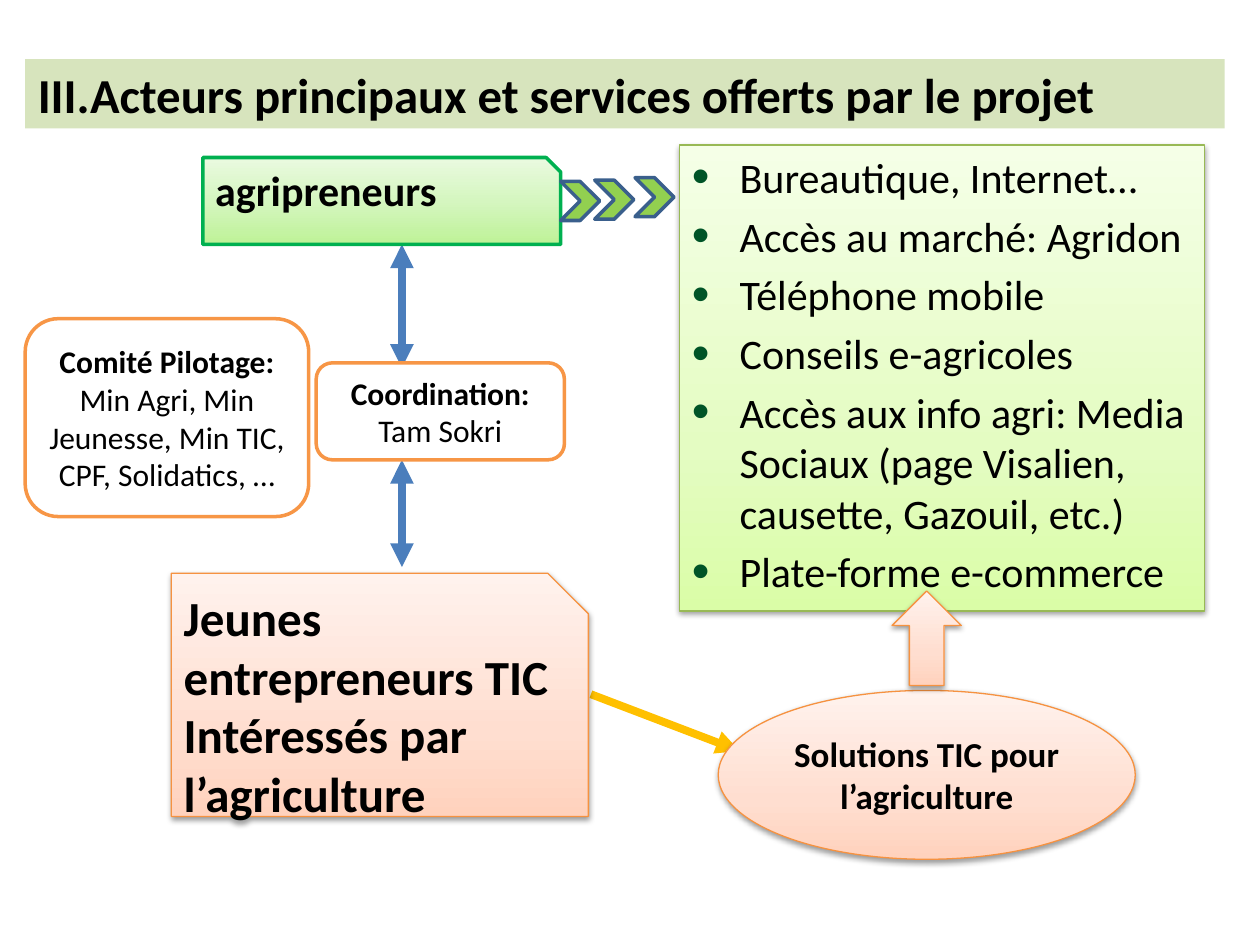
import pptx
import pptx.util
from lxml import etree
from pptx.dml.color import RGBColor
from pptx.enum.shapes import MSO_CONNECTOR, MSO_SHAPE
from pptx.enum.text import MSO_ANCHOR, MSO_AUTO_SIZE, PP_ALIGN
from pptx.oxml import parse_xml
from pptx.oxml.ns import nsdecls, qn

FONT = "Calibri"
BLACK = RGBColor(0x00, 0x00, 0x00)
WHITE = RGBColor(0xFF, 0xFF, 0xFF)
TITLE_GREEN = RGBColor(0xD7, 0xE4, 0xBD)
LIST_BORDER = RGBColor(0x98, 0xB9, 0x55)
BULLET_GREEN = RGBColor(0x00, 0x54, 0x27)
GREEN = RGBColor(0x00, 0xB0, 0x50)
CHEVRON_GREEN = RGBColor(0x92, 0xD0, 0x50)
CHEVRON_BORDER = RGBColor(0x3A, 0x5F, 0x8C)
ORANGE = RGBColor(0xF7, 0x96, 0x46)
PEACH_BORDER = RGBColor(0xF6, 0x92, 0x40)
BLUE = RGBColor(0x4B, 0x7E, 0xBC)
YELLOW = RGBColor(0xFF, 0xC0, 0x00)

# Gradients run from bottom to top: (percent, colour)
LIST_GRADIENT = [(0, RGBColor(0xDA, 0xFD, 0xA7)), (35, RGBColor(0xE4, 0xFC, 0xC2)),
                 (100, RGBColor(0xF5, 0xFF, 0xE7))]
GREEN_GRADIENT = [(0, RGBColor(0xBE, 0xF2, 0x97)), (50, RGBColor(0xD5, 0xF6, 0xC0)),
                  (100, RGBColor(0xEA, 0xFA, 0xE0))]
PEACH_GRADIENT = [(0, RGBColor(0xFF, 0xD2, 0xBD)), (35, RGBColor(0xFF, 0xDE, 0xD0)),
                  (100, RGBColor(0xFF, 0xF2, 0xED))]

# Content; places are (left, top, width, height) on a grid of 100 columns by 75 rows
COLUMNS, ROWS = 100, 75
TITLE = "III.Acteurs principaux et services offerts par le projet"
TITLE_PLACE = (2, 4.7, 95.2, 5.5)
SERVICES = [
    "Bureautique, Internet…",
    "Accès au marché: Agridon",
    "Téléphone mobile",
    "Conseils e-agricoles",
    "Accès aux info agri: Media Sociaux (page Visalien, causette, Gazouil, etc.)",
    "Plate-forme e-commerce",
]
SERVICES_PLACE = (53.9, 11.5, 41.7, 37)

# Styles: fill, border, border width, shadow
GREEN_STYLE = (GREEN_GRADIENT, GREEN, 2, False)
PEACH_STYLE = (PEACH_GRADIENT, PEACH_BORDER, 0.75, True)
CHEVRON_STYLE = (CHEVRON_GREEN, CHEVRON_BORDER, 2, False)
OUTLINE_STYLE = (WHITE, ORANGE, 2, False)

# Actors: shape, place, style, paragraphs of (text, bold) runs, size, alignment
ACTORS = [
    (MSO_SHAPE.SNIP_1_RECTANGLE, (16.1, 12.5, 28.4, 6.9), GREEN_STYLE,
     [[("agripreneurs", True)]], 24, PP_ALIGN.LEFT),
    (MSO_SHAPE.SNIP_1_RECTANGLE, (13.6, 45.5, 33.1, 19.3), PEACH_STYLE,
     [[("Jeunes entrepreneurs TIC", True)], [("Intéressés par l’agriculture", True)]],
     28, PP_ALIGN.LEFT),
    (MSO_SHAPE.OVAL, (57, 54.8, 33.1, 13.4), PEACH_STYLE,
     [[("Solutions TIC pour l’agriculture", True)]], 20, PP_ALIGN.CENTER),
    (MSO_SHAPE.ROUNDED_RECTANGLE, (25.1, 28.8, 19.7, 7.7), OUTLINE_STYLE,
     [[("Coordination: ", True), ("Tam Sokri", False)]], 18, PP_ALIGN.CENTER),
    (MSO_SHAPE.ROUNDED_RECTANGLE, (2, 25.3, 22.5, 15.7), OUTLINE_STYLE,
     [[("Comité Pilotage: ", True),
       ("Min Agri, Min Jeunesse, Min TIC, CPF, Solidatics, …", False)]],
     18, PP_ALIGN.CENTER),
]
UP_ARROW_PLACE = (70.8, 46.9, 5.5, 7.5)
CHEVRON_SIZE = 3.1
CHEVRON_CORNERS = [(44.5, 14.4), (47.2, 14.3), (50.4, 14.1)]

# Arrows: start, end, colour, line ends that carry a head
ARROWS = [
    ((46.9, 55.1), (58.7, 59.6), YELLOW, ["tailEnd"]),
    ((31.9, 36.5), (31.9, 45), BLUE, ["headEnd", "tailEnd"]),
    ((31.9, 19.4), (31.9, 29.2), BLUE, ["headEnd", "tailEnd"]),
]

presentation = pptx.Presentation()
presentation.slide_width = pptx.util.Inches(10)
presentation.slide_height = pptx.util.Inches(7.5)
slide = presentation.slides.add_slide(presentation.slide_layouts[1])


def to_slide(*lengths):
    """Turn alternating column and row counts into slide lengths."""
    steps = (presentation.slide_width / COLUMNS, presentation.slide_height / ROWS)
    return [round(length * steps[i % 2]) for i, length in enumerate(lengths)]


def move(shape, place):
    shape.left, shape.top, shape.width, shape.height = to_slide(*place)


def decorate(shape, fill, border, border_width, has_shadow):
    if isinstance(fill, list):
        shape.fill.background()
        stops = "".join(f'<a:gs pos="{percent * 1000}"><a:srgbClr val="{color}"/></a:gs>'
                        for percent, color in fill)
        gradient = parse_xml(f'<a:gradFill {nsdecls("a")} rotWithShape="1"><a:gsLst>{stops}'
                             '</a:gsLst><a:lin ang="16200000" scaled="0"/></a:gradFill>')
        properties = shape._element.spPr
        properties.replace(properties.find(qn("a:noFill")), gradient)
    else:
        shape.fill.solid()
        shape.fill.fore_color.rgb = fill
    shape.line.color.rgb = border
    shape.line.width = pptx.util.Pt(border_width)
    shape.shadow.inherit = False
    if has_shadow:
        shape._element.spPr.find(qn("a:effectLst")).append(parse_xml(
            f'<a:outerShdw {nsdecls("a")} blurRad="40000" dist="20000" dir="5400000" '
            'rotWithShape="0"><a:srgbClr val="000000"><a:alpha val="38000"/>'
            '</a:srgbClr></a:outerShdw>'))


def format_font(font, size, bold):
    font.name = FONT
    font.size = pptx.util.Pt(size)
    font.bold = bold
    font.color.rgb = BLACK


def add_shape(kind, place, style):
    shape = slide.shapes.add_shape(kind, *to_slide(*place))
    decorate(shape, *style)
    return shape


def add_actor(kind, place, style, paragraphs, size, alignment):
    text_frame = add_shape(kind, place, style).text_frame
    text_frame.word_wrap = True
    text_frame.vertical_anchor = MSO_ANCHOR.MIDDLE
    for index, runs in enumerate(paragraphs):
        paragraph = text_frame.paragraphs[0] if index == 0 else text_frame.add_paragraph()
        paragraph.alignment = alignment
        for text, bold in runs:
            run = paragraph.add_run()
            run.text = text
            format_font(run.font, size, bold)
    return text_frame


def add_arrow(start, end, color, heads):
    arrow = slide.shapes.add_connector(
        MSO_CONNECTOR.STRAIGHT, *to_slide(*start), *to_slide(*end))
    arrow.line.color.rgb = color
    arrow.line.width = pptx.util.Pt(4.5)
    for head in heads:
        etree.SubElement(arrow.line._get_or_add_ln(), qn(f"a:{head}"), type="triangle")
    etree.SubElement(arrow._element.spPr, qn("a:effectLst"))


# Title band
title = slide.shapes.title
move(title, TITLE_PLACE)
title.fill.solid()
title.fill.fore_color.rgb = TITLE_GREEN
title.text_frame.text = TITLE
title.text_frame.auto_size = MSO_AUTO_SIZE.NONE
title.text_frame.vertical_anchor = MSO_ANCHOR.MIDDLE
title.text_frame.paragraphs[0].alignment = PP_ALIGN.LEFT
format_font(title.text_frame.paragraphs[0].runs[0].font, 27.9, True)

# List of services
services = slide.placeholders[1]
move(services, SERVICES_PLACE)
decorate(services, LIST_GRADIENT, LIST_BORDER, 0.75, True)
services.text_frame.text = "\n".join(SERVICES)
services.text_frame.auto_size = MSO_AUTO_SIZE.NONE
for index, paragraph in enumerate(services.text_frame.paragraphs):
    paragraph.space_before = pptx.util.Pt(4.8 if index else 0)
    properties = paragraph._p.get_or_add_pPr()
    indent = pptx.util.Inches(0.38)
    properties.set("marL", str(indent))
    properties.set("indent", str(-indent))
    bullet_color = etree.SubElement(properties, qn("a:buClr"))
    etree.SubElement(bullet_color, qn("a:srgbClr"), val=str(BULLET_GREEN))
    etree.SubElement(properties, qn("a:buSzPct"), val="120000")
    etree.SubElement(properties, qn("a:buChar"), char="•")
    format_font(paragraph.runs[0].font, 24, False)

# Arrows, then the actors and the signs between them
for arrow in ARROWS:
    add_arrow(*arrow)
agripreneurs, *_ = [add_actor(*actor) for actor in ACTORS]
agripreneurs.vertical_anchor = MSO_ANCHOR.TOP
agripreneurs.margin_top = 0
add_shape(MSO_SHAPE.UP_ARROW, UP_ARROW_PLACE, PEACH_STYLE)
for corner in CHEVRON_CORNERS:
    add_shape(MSO_SHAPE.CHEVRON, (*corner, CHEVRON_SIZE, CHEVRON_SIZE), CHEVRON_STYLE)

presentation.save("out.pptx")
